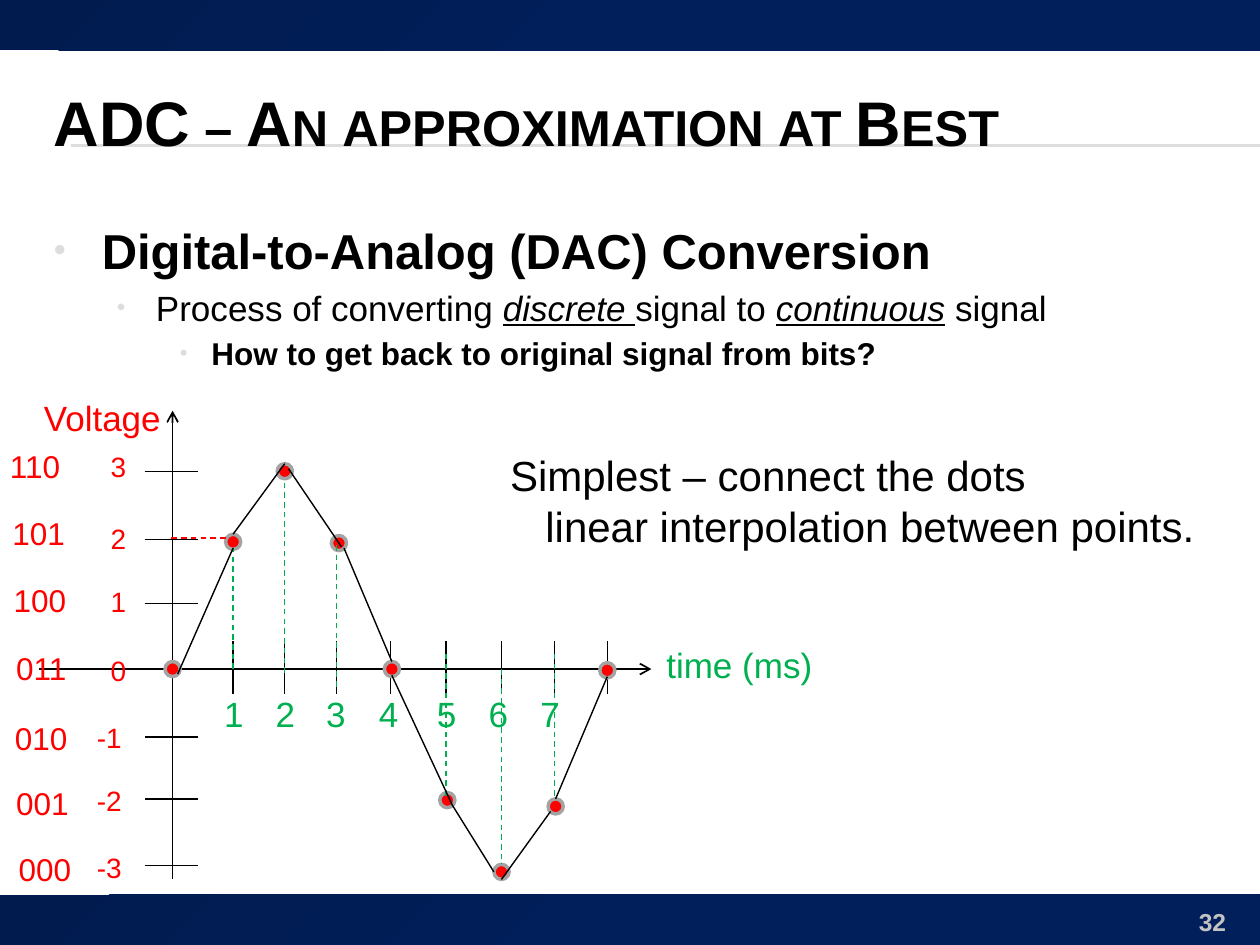
from dataclasses import dataclass

from lxml import etree
from pptx import Presentation
from pptx import util as u
from pptx.dml.color import RGBColor
from pptx.enum import dml, shapes, text
from pptx.oxml.ns import qn


@dataclass(frozen=True)
class Theme:
    font: str = "Arial"
    ink: str = "000000"
    red: str = "FF0000"
    green: str = "00B050"
    ring: str = "A3A3A3"
    rule: str = "DDDDDD"
    number: str = "C3C3C3"
    band: tuple = ("011B4E", "011F5B")
    title: int = 36
    levels: tuple = (28, 20, 18)
    note: int = 24
    axis: int = 20
    code: int = 18
    volt: int = 16
    page: int = 14
    thin: float = 0.79


class Deck:
    def __init__(self, theme):
        self.t = theme
        self.prs = Presentation()
        self.prs.slide_width, self.prs.slide_height = u.Inches(10), u.Inches(7.5)
        self.s = self.prs.slides.add_slide(self.prs.slide_layouts[6])

    def band(self, y):
        sp = self.s.shapes.add_shape(shapes.MSO_SHAPE.RECTANGLE, 0, u.Inches(y), u.Inches(10), u.Inches(0.4))
        sp.shadow.inherit = False
        sp.line.fill.background()
        sp.fill.gradient()
        sp.fill.gradient_angle = 315
        for stop, color, pos in zip(sp.fill.gradient_stops, self.t.band, (0, 0.5)):
            stop.color.rgb = RGBColor.from_string(color)
            stop.position = pos

    def line(self, x1, y1, x2, y2, color=None, width=None, dash=False, arrow=False):
        ends = [u.Inches(v) for v in (x1, y1, x2, y2)]
        c = self.s.shapes.add_connector(shapes.MSO_CONNECTOR.STRAIGHT, *ends)
        c.line.color.rgb = RGBColor.from_string(color or self.t.ink)
        c.line.width = u.Pt(width or self.t.thin)
        if dash:
            c.line.dash_style = dml.MSO_LINE.DASH
        if arrow:
            etree.SubElement(c.line._get_or_add_ln(), qn("a:headEnd"), type="arrow")
        etree.SubElement(c._element.spPr, qn("a:effectLst"))

    def dot(self, x, y, d=0.12):
        box = [u.Inches(v) for v in (x - d / 2, y - d / 2, d, d)]
        sp = self.s.shapes.add_shape(shapes.MSO_SHAPE.OVAL, *box)
        sp.shadow.inherit = False
        sp.fill.solid()
        sp.fill.fore_color.rgb = RGBColor.from_string(self.t.red)
        sp.line.color.rgb = RGBColor.from_string(self.t.ring)
        sp.line.width = u.Pt(2)

    def frame(self, x, y, w, h, wrap=True):
        tf = self.s.shapes.add_textbox(*[u.Inches(v) for v in (x, y, w, h)]).text_frame
        tf.word_wrap = wrap
        tf.auto_size = text.MSO_AUTO_SIZE.NONE if wrap else text.MSO_AUTO_SIZE.SHAPE_TO_FIT_TEXT
        return tf

    def run(self, p, words, size, color=None, bold=False, italic=False, underline=False):
        r = p.add_run()
        r.text = words
        f = r.font
        f.name, f.size = self.t.font, u.Pt(size)
        f.bold, f.italic, f.underline = bold, italic, underline
        f.color.rgb = RGBColor.from_string(color or self.t.ink)
        return r

    def label(self, x, y, w, h, words, size, color):
        self.run(self.frame(x, y, w, h, wrap=False).paragraphs[0], words, size, color)

    def title(self, words):
        tf = self.frame(0.33, 0.5, 9.5, 0.92)
        tf.vertical_anchor = text.MSO_ANCHOR.MIDDLE
        r = self.run(tf.paragraphs[0], words, self.t.title, bold=True)
        r.font._element.set("cap", "small")

    def bullets(self, items):
        tf = self.frame(0.33, 1.7, 10.24, 5.3)
        indents = ((0.38, -0.38), (0.81, -0.31), (1.25, -0.25))
        for level, runs in enumerate(items):
            p = tf.add_paragraph() if level else tf.paragraphs[0]
            size = self.t.levels[level]
            p.level = level
            p.space_before = u.Pt(size * 0.2)
            pPr = p._p.get_or_add_pPr()
            for name, value in zip(("marL", "indent"), indents[level]):
                pPr.set(name, str(u.Inches(value)))
            clr = etree.SubElement(pPr, qn("a:buClr"))
            etree.SubElement(clr, qn("a:srgbClr"), val=self.t.rule)
            etree.SubElement(pPr, qn("a:buSzPct"), val="70000")
            etree.SubElement(pPr, qn("a:buFont"), typeface=self.t.font)
            etree.SubElement(pPr, qn("a:buChar"), char="•")
            for words, style in runs:
                self.run(p, words, size, **style)

    def note(self, lines):
        tf = self.frame(3.95, 3.52, 5.69, 0.91, wrap=False)
        for i, words in enumerate(lines):
            p = tf.add_paragraph() if i else tf.paragraphs[0]
            if i:
                p._p.get_or_add_pPr().set("marL", str(u.Inches(0.28)))
            self.run(p, words, self.t.note)

    def page_number(self, words):
        p = self.frame(9, 7.15, 0.83, 0.27).paragraphs[0]
        p.alignment = text.PP_ALIGN.RIGHT
        self.run(p, words, self.t.page, self.t.number, bold=True)


def main():
    t = Theme()
    d = Deck(t)
    for y in (1.15, 1.16):
        d.line(0.56, y, 10, y, t.rule, 0.75)
    for y in (0, 7.1):
        d.band(y)
    d.title("ADC – An approximation at Best")
    bold, stress = {"bold": True}, {"italic": True, "underline": True}
    d.bullets([
        [("Digital-to-Analog (DAC) Conversion", bold)],
        [("Process of converting ", {}), ("discrete", stress), (" ", {"underline": True}),
         ("signal to ", {}), ("continuous", stress), (" signal", {})],
        [("How to get back to original signal from bits?", bold)],
    ])
    d.page_number("32")

    zero = 5.31
    d.line(5.17, zero, 0.31, zero, width=1, arrow=True)
    d.line(1.37, 3.26, 1.37, 6.98, width=1, arrow=True)
    d.label(5.19, 5.06, 1.37, 0.44, "time (ms)", t.axis, t.green)
    d.label(0.25, 3.1, 1.14, 0.44, "Voltage", t.axis, t.red)

    ticks_x = (1.85, 2.26, 2.67, 3.1, 3.54, 3.98, 4.4, 4.82)
    for x in ticks_x:
        d.line(x, 5.09, x, 5.51)
    for i, x in enumerate((1.68, 2.09, 2.49, 2.91, 3.37, 3.78, 4.19), 1):
        d.label(x, 5.45, 0.36, 0.44, str(i), t.axis, t.green)

    samples = [(1.37, zero), (1.85, 4.3), (2.26, 3.74), (2.69, 4.31), (3.11, zero),
               (3.55, 6.35), (3.98, 6.92), (4.41, 6.4), (4.82, 5.32)]
    for x, y in samples:
        d.dot(x, y)

    for y in (3.74, 4.28, 4.79, 5.85, 6.34, 6.87):
        d.line(1.15, y, 1.57, y)
    volts = (3.52, 4.09, 4.59, 5.14, 5.67, 6.17, 6.7)
    for i, y in enumerate(volts):
        v = 3 - i
        x, w = (0.78, 0.33) if v >= 0 else (0.67, 0.4)
        d.label(x, y, w, 0.37, str(v), t.volt, t.red)
    codes = ((0.05, 6.7), (0.03, 6.17), (0.02, 5.66), (0.03, 5.1), (0.01, 4.56), (0, 4.03), (-0.02, 3.5))
    for i, (x, y) in enumerate(codes):
        d.label(x, y, 0.62, 0.4, f"{i:03b}", t.code, t.red)

    stems = ((1.85, zero, 4.35), (2.26, 5.34, 3.8), (2.67, 5.45, 4.3),
             (3.54, 5.19, 6.34), (3.98, zero, 6.86), (4.4, 5.19, 6.34))
    for x, y1, y2 in stems:
        d.line(x, y1, x, y2, t.green, dash=True)
    d.line(1.36, 4.27, 1.83, 4.27, t.red, dash=True)

    segments = ((1.41, 5.35, 1.85, 4.35), (1.85, 4.24, 2.26, 3.68), (2.29, 3.72, 2.71, 4.34),
                (2.73, 4.35, 3.11, 5.25), (3.11, 5.36, 3.59, 6.39), (3.59, 6.39, 3.92, 6.92),
                (3.98, 6.98, 4.37, 6.44), (4.41, 6.34, 4.82, 5.37))
    for seg in segments:
        d.line(*seg)
    d.note(["Simplest – connect the dots", "linear interpolation between points."])
    d.prs.save("out.pptx")


if __name__ == "__main__":
    main()
